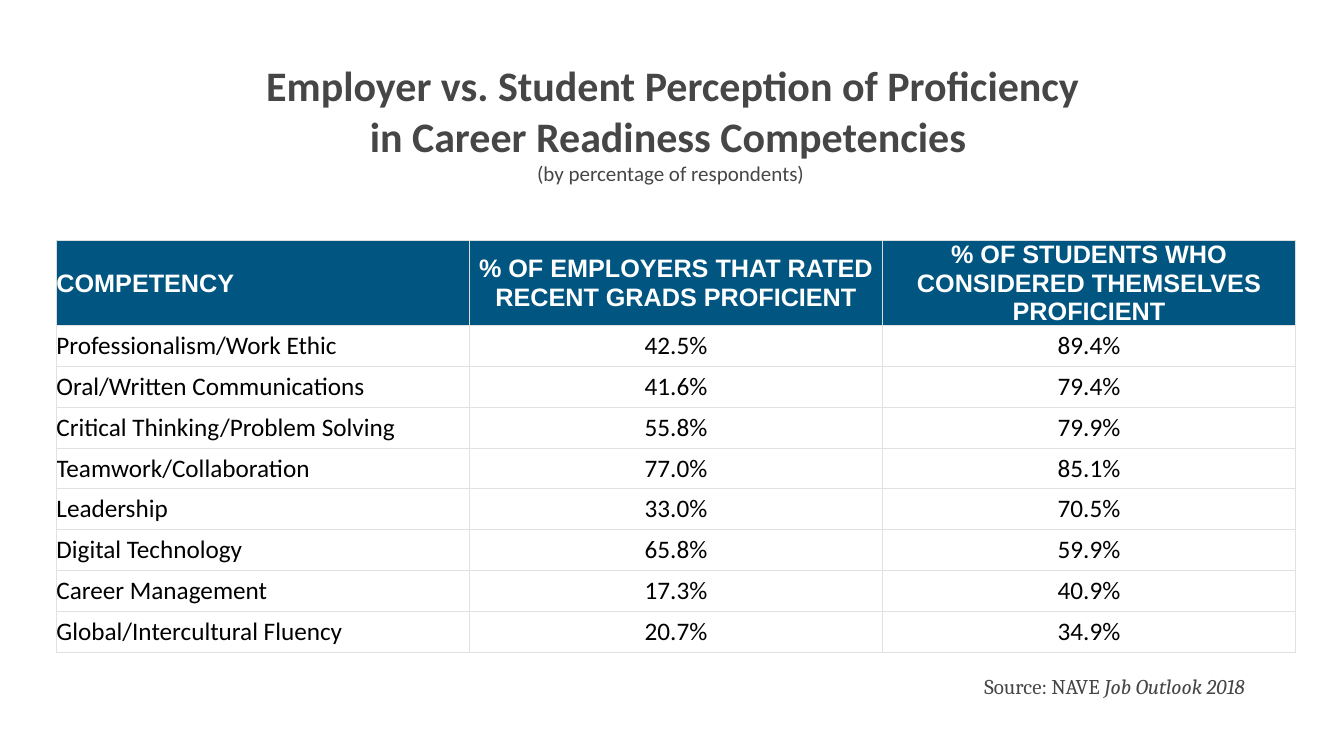
from lxml.etree import SubElement
from pptx import Presentation
from pptx.dml.color import RGBColor
from pptx.enum.text import MSO_ANCHOR, PP_ALIGN
from pptx.oxml.ns import qn
from pptx.util import Inches, Pt

TITLE = ["Employer vs. Student Perception of Proficiency",
         "in Career Readiness Competencies "]
SUBTITLE = "(by percentage of respondents) "
SOURCE = ("Source: NAVE ", "Job Outlook 2018")
HEADERS = ("COMPETENCY",
           "% OF EMPLOYERS THAT RATED RECENT GRADS PROFICIENT",
           "% OF STUDENTS WHO CONSIDERED THEMSELVES PROFICIENT")
RATINGS = [
    ("Professionalism/Work Ethic", "42.5%", "89.4%"),
    ("Oral/Written Communications", "41.6%", "79.4%"),
    ("Critical Thinking/Problem Solving", "55.8%", "79.9%"),
    ("Teamwork/Collaboration", "77.0%", "85.1%"),
    ("Leadership", "33.0%", "70.5%"),
    ("Digital Technology", "65.8%", "59.9%"),
    ("Career Management", "17.3%", "40.9%"),
    ("Global/Intercultural Fluency", "20.7%", "34.9%"),
]
GREY, BLUE, WHITE, BLACK = "464646", "005581", "FFFFFF", "000000"
HEAD_LINE, BODY_LINE = "DDDDDD", "E1E1E1"
TABLE_LEFT, TABLE_TOP, TABLE_W, TABLE_H = 0.56, 2.39, 12.29, 4.05
HEAD_H = 0.81


def rgb(value):
    return RGBColor.from_string(value)


def add_text(p, text, size=18, font="Calibri", color=GREY, bold=False,
             italic=False, align=PP_ALIGN.CENTER):
    p.alignment = align
    r = p.add_run()
    r.text = text
    r.font.size, r.font.name = Pt(size), font
    r.font.bold, r.font.italic = bold, italic
    r.font.color.rgb = rgb(color)


def set_borders(cell, side, bottom):
    tcPr = cell._tc.get_or_add_tcPr()
    colors = {"a:lnL": side, "a:lnR": side, "a:lnT": side, "a:lnB": bottom}
    for tag, color in colors.items():
        ln = SubElement(tcPr, qn(tag), w=str(Pt(0.75)))
        fill = SubElement(ln, qn("a:solidFill"))
        SubElement(fill, qn("a:srgbClr"), val=color)


def add_ratings_table(slide):
    rows = [HEADERS, *RATINGS]
    table = slide.shapes.add_table(
        len(rows), len(HEADERS), Inches(TABLE_LEFT), Inches(TABLE_TOP),
        Inches(TABLE_W), Inches(TABLE_H)).table
    row_h = (TABLE_H - HEAD_H) / len(RATINGS)
    for i, row in enumerate(rows):
        head = i == 0
        table.rows[i].height = Inches(HEAD_H if head else row_h)
        for j, text in enumerate(row):
            cell = table.cell(i, j)
            cell.margin_left = cell.margin_right = 0
            cell.margin_top = cell.margin_bottom = 0
            cell.vertical_anchor = MSO_ANCHOR.MIDDLE
            set_borders(cell, HEAD_LINE if head else BODY_LINE, BODY_LINE)
            cell.fill.solid()
            cell.fill.fore_color.rgb = rgb(BLUE if head else WHITE)
            add_text(cell.text_frame.paragraphs[0], text,
                     font="Arial" if head else "Calibri",
                     color=WHITE if head else BLACK, bold=head,
                     align=PP_ALIGN.CENTER if j else PP_ALIGN.LEFT)


def add_box(slide, left, top, width, height, wrap=True):
    tf = slide.shapes.add_textbox(Inches(left), Inches(top), Inches(width),
                                  Inches(height)).text_frame
    tf.word_wrap = wrap
    return tf


def main():
    prs = Presentation()
    prs.slide_width, prs.slide_height = Inches(13.33), Inches(7.5)
    slide = prs.slides.add_slide(prs.slide_layouts[6])
    add_ratings_table(slide)

    tf = add_box(slide, 0.14, 0.54, 13.07, 1.36)
    tf.vertical_anchor = MSO_ANCHOR.MIDDLE
    add_text(tf.paragraphs[0], TITLE[0], size=30, bold=True)
    add_text(tf.add_paragraph(), TITLE[1], size=30, bold=True)
    add_text(tf.add_paragraph(), SUBTITLE, size=15)

    p = add_box(slide, 9.57, 6.63, 2.97, 0.35, wrap=False).paragraphs[0]
    for text, italic in zip(SOURCE, (False, True)):
        add_text(p, text, size=15, font="Cambria", italic=italic)

    prs.save("out.pptx")


if __name__ == "__main__":
    main()
